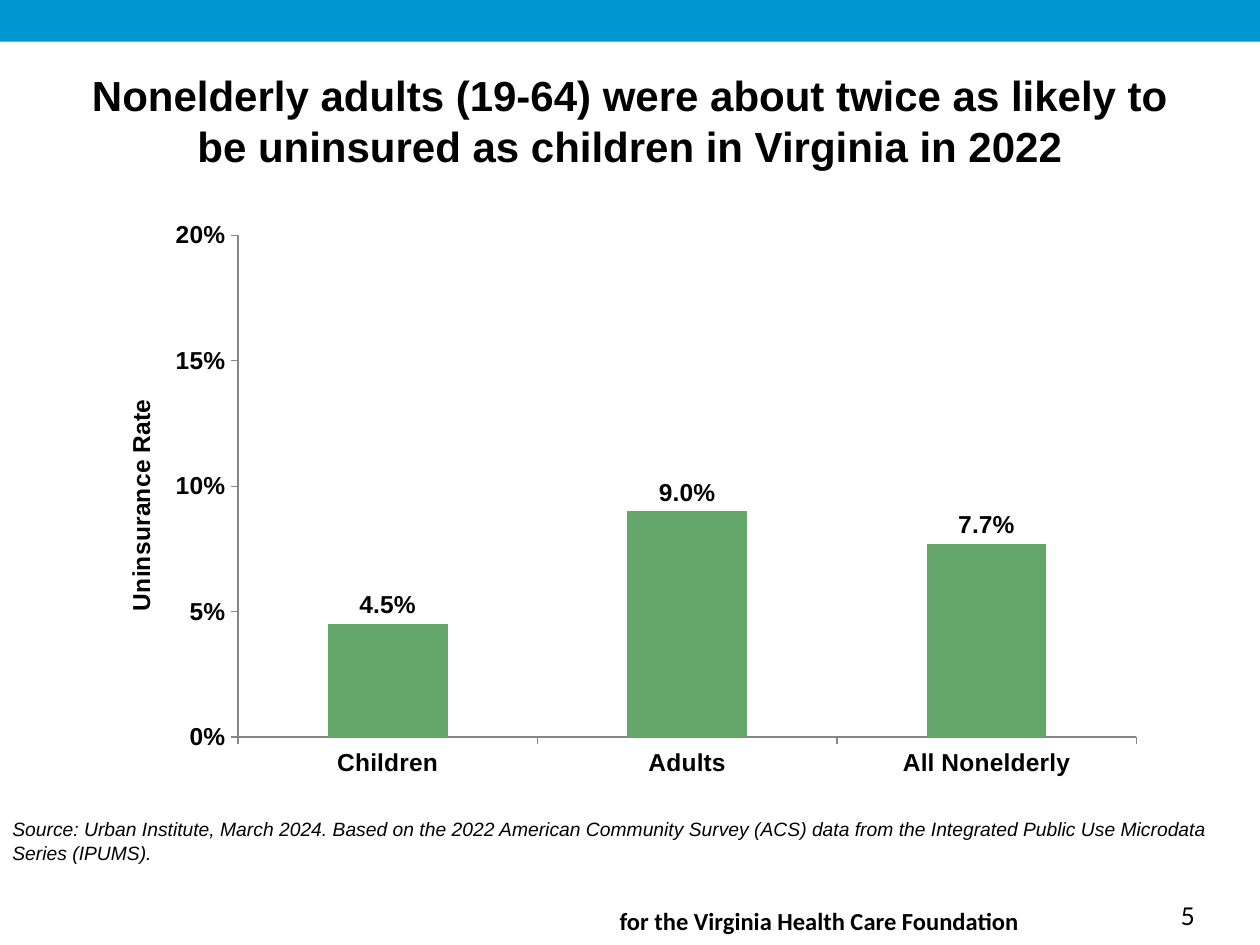
from pptx import Presentation
from pptx.chart.data import CategoryChartData
from pptx.dml.color import RGBColor
from pptx.enum.chart import XL_CHART_TYPE as ChartType, XL_LABEL_POSITION as LabelPosition
from pptx.enum.chart import XL_TICK_MARK as TickMark
from pptx.enum.shapes import MSO_SHAPE as Shape
from pptx.enum.text import MSO_ANCHOR as Anchor, PP_ALIGN as Align
from pptx.oxml import parse_xml
from pptx.oxml.ns import nsdecls, qn
from pptx.util import Cm, Pt

BLACK = RGBColor(0x00, 0x00, 0x00)
BLUE = RGBColor(0x00, 0x96, 0xD2)
GREEN = RGBColor(0x65, 0xA7, 0x6B)
GRAY = RGBColor(0x86, 0x86, 0x86)


def format_font(font, name="Arial", size=14, bold=False, italic=False):
    font.name = name
    font.size = Pt(size)
    font.bold = bold
    font.italic = italic
    font.color.rgb = BLACK


def write(frame, text, align=Align.LEFT, **style):
    para = frame.paragraphs[0]
    para.alignment = align
    span = para.add_run()
    span.text = text
    format_font(span.font, **style)


def set_layout(parent, index, target="", **fractions):
    for old in parent.findall(qn("c:layout")):
        parent.remove(old)
    inner = f'<c:layoutTarget val="{target}"/>' if target else ""
    inner += "".join(f'<c:{key}Mode val="edge"/>' for key in "xy")
    inner += "".join(f'<c:{key} val="{value}"/>' for key, value in fractions.items())
    parent.insert(index, parse_xml(
        f'<c:layout {nsdecls("c")}><c:manualLayout>{inner}</c:manualLayout></c:layout>'))


class SlideBuilder:
    """Draws the elements of a slide in one shared style."""

    def __init__(self, page):
        self.page = page

    def band(self, left, top, width, height):
        band = self.page.shapes.add_shape(
            Shape.RECTANGLE, Cm(left), Cm(top), Cm(width), Cm(height))
        band.shadow.inherit = False
        band.fill.solid()
        band.fill.fore_color.rgb = BLUE
        band.line.fill.background()

    def text(self, text, left, top, width, height, anchor=Anchor.TOP, **style):
        box = self.page.shapes.add_textbox(Cm(left), Cm(top), Cm(width), Cm(height))
        frame = box.text_frame
        frame.word_wrap = True
        frame.vertical_anchor = anchor
        write(frame, text, **style)

    def column_chart(self, rates, axis_title, left, top, width, height):
        data = CategoryChartData(number_format="0.0%")
        data.categories = list(rates)
        data.add_series("Series 1", list(rates.values()))
        chart = self.page.shapes.add_chart(
            ChartType.COLUMN_CLUSTERED, Cm(left), Cm(top), Cm(width), Cm(height), data).chart
        chart.has_legend = False
        chart.has_title = False
        format_font(chart.font, bold=True)

        plot = chart.plots[0]
        plot.gap_width = 150
        plot.vary_by_categories = False
        fill = plot.series[0].format.fill
        fill.solid()
        fill.fore_color.rgb = GREEN
        plot.has_data_labels = True
        labels = plot.data_labels
        labels.show_value = True
        labels.number_format = "0.0%"
        labels.number_format_is_linked = False
        labels.position = LabelPosition.OUTSIDE_END
        format_font(labels.font, bold=True)

        for axis in (chart.category_axis, chart.value_axis):
            axis.has_major_gridlines = False
            axis.major_tick_mark = TickMark.OUTSIDE
            axis.minor_tick_mark = TickMark.NONE
            axis.format.line.color.rgb = GRAY
            axis.format.line.width = Pt(0.75)
        rate_axis = chart.value_axis
        rate_axis.minimum_scale = 0
        rate_axis.maximum_scale = 0.2
        rate_axis.major_unit = 0.05
        rate_axis.tick_labels.number_format = "0%"
        rate_axis.tick_labels.number_format_is_linked = False
        write(rate_axis.axis_title.text_frame, axis_title, align=Align.CENTER, bold=True)

        set_layout(rate_axis.axis_title._element, 1, x=0.03, y=0.32)
        plot_area = chart._chartSpace.chart.plotArea
        set_layout(plot_area, 0, "inner", x=0.14, y=0.045, w=0.84, h=0.866)


def main():
    deck = Presentation()
    deck.slide_width, deck.slide_height = Cm(25.4), Cm(19.05)
    builder = SlideBuilder(deck.slides.add_slide(deck.slide_layouts[6]))

    builder.band(0, 0, 25.4, 0.84)
    builder.text("5", 23.55, 18.03, 1.85, 0.86, name="Lato")
    builder.text(
        "Nonelderly adults (19-64) were about twice as likely to be uninsured "
        "as children in Virginia in 2022",
        1.27, 1.27, 22.86, 2.31, anchor=Anchor.MIDDLE,
        align=Align.CENTER, size=24, bold=True)
    builder.column_chart(
        {"Children": 0.045, "Adults": 0.09, "All Nonelderly": 0.077},
        "Uninsurance Rate", 1.78, 4.22, 21.56, 11.68)
    builder.text(
        "Source: Urban Institute, March 2024. Based on the 2022 American Community Survey "
        "(ACS) data from the Integrated Public Use Microdata Series (IPUMS).",
        0, 16.36, 25.4, 1.19, size=11, italic=True)
    builder.text("for the Virginia Health Care Foundation",
                 12.24, 18.14, 12.32, 0.66, name="Calibri", bold=True)

    deck.save("out.pptx")


if __name__ == "__main__":
    main()
